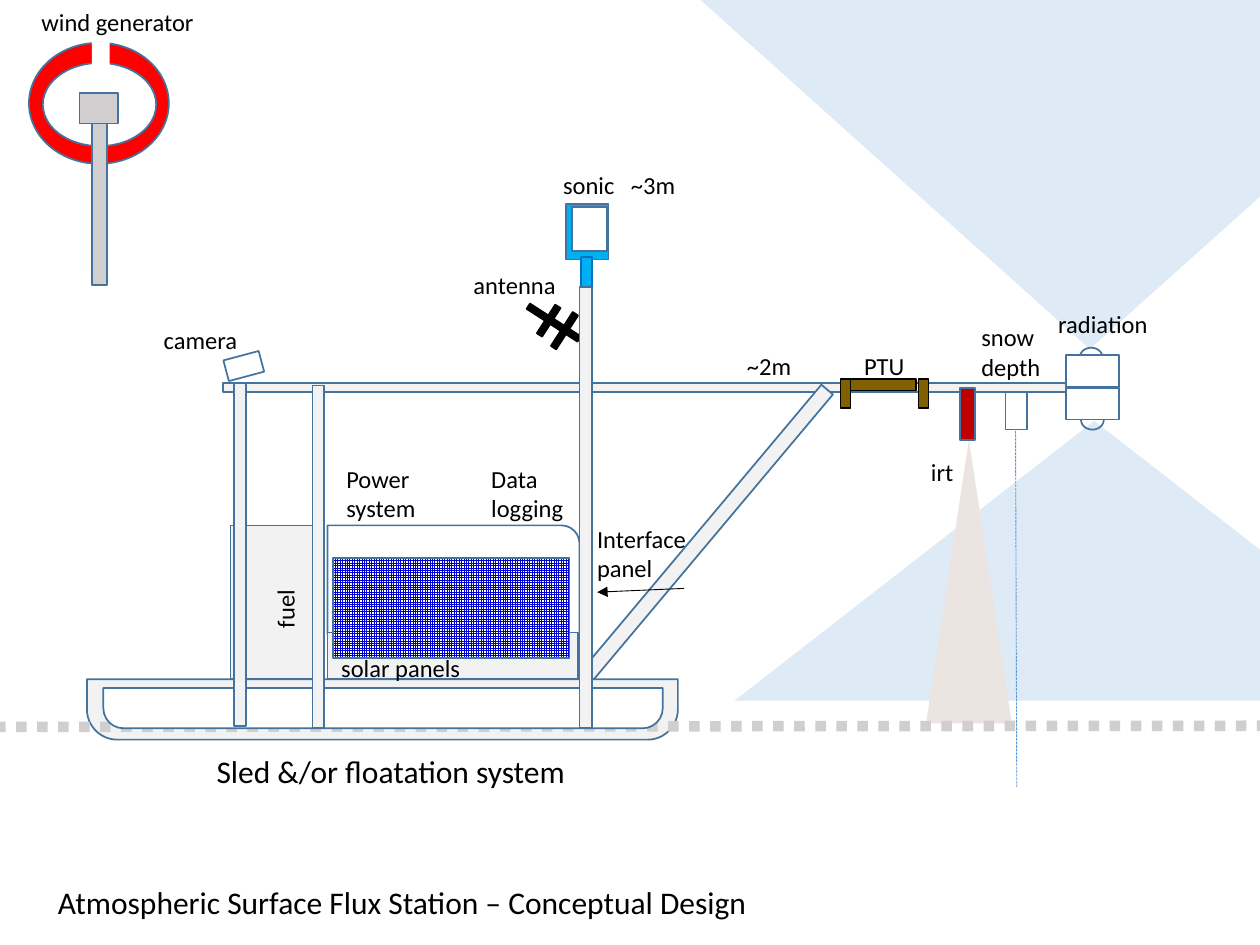
from lxml import etree
from pptx import Presentation
from pptx.dml.color import RGBColor
from pptx.enum.dml import MSO_LINE, MSO_PATTERN
from pptx.enum.shapes import MSO_CONNECTOR, MSO_SHAPE
from pptx.enum.text import MSO_ANCHOR, PP_ALIGN
from pptx.oxml.ns import qn
from pptx.util import Inches, Pt

RECT = MSO_SHAPE.RECTANGLE
OVAL = MSO_SHAPE.OVAL
TRIANGLE = MSO_SHAPE.ISOSCELES_TRIANGLE
HULL = MSO_SHAPE.ROUND_2_SAME_RECTANGLE
CABIN = MSO_SHAPE.ROUND_1_RECTANGLE
DASH = MSO_LINE.SQUARE_DOT
DOT = MSO_LINE.ROUND_DOT

OUTLINE = "43739E"
FRAME = "F2F2F2"
SKY = "DEEBF7"
STEEL = "D0CECE"
WHITE = "FFFFFF"
BLACK = "000000"
CYAN = "00B0F0"
BRONZE = "806000"

color = RGBColor.from_string

prs = Presentation()
prs.slide_width = Inches(10)
prs.slide_height = Inches(7.5)
slide = prs.slides.add_slide(prs.slide_layouts[5])


def add_part(kind, left, top, width, height, fill=None, line=OUTLINE, turn=0):
    part = slide.shapes.add_shape(
        kind, Inches(left), Inches(top), Inches(width), Inches(height))
    part.shadow.inherit = False
    part.rotation = turn
    if fill:
        part.fill.solid()
        part.fill.fore_color.rgb = color(fill)
    else:
        part.fill.background()
    if line:
        part.line.color.rgb = color(line)
        part.line.width = Pt(1)
    else:
        part.line.fill.background()
    if kind == HULL:
        part.adjustments[0] = 0.5
        part.adjustments[1] = 0
    return part


def write_text(holder, text, size, wrap):
    frame = holder.text_frame
    frame.word_wrap = wrap
    frame.vertical_anchor = MSO_ANCHOR.TOP
    paragraph = frame.paragraphs[0]
    paragraph.alignment = PP_ALIGN.LEFT
    run = paragraph.add_run()
    run.text = text
    run.font.name = "Calibri"
    run.font.size = Pt(size)
    run.font.color.rgb = color(BLACK)


title = slide.shapes.title
title.left, title.top = Inches(0.36), Inches(6.96)
title.width, title.height = Inches(6.24), Inches(0.4)
write_text(title, "Atmospheric Surface Flux Station – Conceptual Design", 18, True)

for part in [
    (TRIANGLE, 5.83, 3.34, 5.71, 2.22, SKY, None),
    (TRIANGLE, 5.56, 0, 6.18, 2.77, SKY, None, 180),
]:
    add_part(*part)

wind_generator = [
    (OVAL, 0.23, 0.34, 1.11, 0.96, "FF0000"),
    (OVAL, 0.34, 0.5, 0.9, 0.66, WHITE),
    (RECT, 0.73, 0.33, 0.14, 0.28, WHITE, None),
    (RECT, 0.73, 0.97, 0.12, 1.29, STEEL),
    (RECT, 0.63, 0.74, 0.31, 0.24, STEEL),
]
sled_frame = [
    (CABIN, 2.6, 4.17, 2, 0.86),
    (RECT, 1.77, 3.04, 6.69, 0.07, FRAME),
    (RECT, 4.06, 4.2, 3.05, 0.12, FRAME, OUTLINE, 310),
    (RECT, 7.98, 3.11, 0.17, 0.3),
    (HULL, 0.69, 5.39, 4.69, 0.48, FRAME, OUTLINE, 180),
    (RECT, 2.6, 5.02, 1.99, 0.37, FRAME),
]
radiation_sensor = [
    (OVAL, 8.58, 3.26, 0.18, 0.15),
    (OVAL, 8.57, 2.76, 0.18, 0.15),
    (RECT, 8.46, 3.08, 0.42, 0.25, WHITE),
    (RECT, 8.46, 2.82, 0.42, 0.25, WHITE),
]
antenna = [
    (RECT, 4.37, 2.32, 0.05, 0.48, BLACK, BLACK, 302.8),
    (RECT, 4.22, 2.52, 0.27, 0.05, BLACK, BLACK, 302.8),
    (RECT, 4.32, 2.6, 0.32, 0.05, BLACK, BLACK, 302.8),
]
camera = [(RECT, 1.79, 2.82, 0.29, 0.17, None, OUTLINE, 345.1)]
irt = [
    (TRIANGLE, 7.35, 3.49, 0.68, 2.25, "EBE4E1", None),
    (RECT, 7.62, 3.08, 0.12, 0.41, "C00000"),
]
sonic = [
    (RECT, 4.49, 1.62, 0.34, 0.44, CYAN),
    (RECT, 4.54, 1.64, 0.28, 0.35, WHITE),
    (RECT, 4.61, 2.04, 0.09, 0.24, CYAN, "0070C0"),
]
for device in [wind_generator, sled_frame, radiation_sensor, antenna, camera, irt, sonic]:
    for part in device:
        add_part(*part)

solar_panels = add_part(RECT, 2.64, 4.43, 1.88, 0.79)
solar_panels.fill.patterned()
solar_panels.fill.pattern = MSO_PATTERN.SMALL_GRID
solar_panels.fill.fore_color.rgb = color("0000CC")
solar_panels.fill.back_color.rgb = color(WHITE)

for x1, y1, x2, y2, stroke, weight, dash, has_arrow in [
    (8.06, 3.42, 8.07, 6.25, "5B9BD5", 0.5, DASH, False),
    (-0.04, 5.77, 10, 5.76, STEEL, 6, DOT, False),
    (5.43, 4.67, 4.74, 4.7, BLACK, 0.5, None, True),
]:
    connector = slide.shapes.add_connector(
        MSO_CONNECTOR.STRAIGHT, Inches(x1), Inches(y1), Inches(x2), Inches(y2))
    connector.line.color.rgb = color(stroke)
    connector.line.width = Pt(weight)
    if dash:
        connector.line.dash_style = dash
    properties = connector.element.spPr
    if has_arrow:
        etree.SubElement(properties.find(qn("a:ln")), qn("a:tailEnd"), type="triangle")
    etree.SubElement(properties, qn("a:effectLst"))

fuel_tank = add_part(RECT, 1.83, 4.17, 0.73, 1.22, FRAME)

ptu = [
    (6.75, 0.52, 0.09),
    (6.67, 0.08, 0.23),
    (7.29, 0.08, 0.23),
]
for left, width, height in ptu:
    add_part(RECT, left, 3.01, width, height, BRONZE, BLACK)

for text, left, top, width, height, size, wrap, turn in [
    ("wind generator", 0.23, 0.01, 1.42, 0.34, 14, False, 0),
    ("radiation", 8.3, 2.4, 0.92, 0.34, 14, False, 0),
    ("snow depth", 7.69, 2.51, 0.87, 0.57, 14, True, 0),
    ("PTU", 6.76, 2.74, 0.53, 0.34, 14, False, 0),
    ("sonic", 4.37, 1.3, 0.61, 0.34, 14, False, 0),
    ("irt", 7.29, 3.58, 0.38, 0.34, 14, False, 0),
    ("Sled &/or floatation system", 1.62, 5.92, 3.12, 0.4, 18, True, 0),
    ("antenna", 3.66, 2.09, 0.86, 0.34, 14, False, 0),
    ("camera", 1.2, 2.53, 0.79, 0.34, 14, False, 0),
    ("solar panels", 2.61, 5.13, 1.64, 0.34, 14, True, 0),
    ("fuel", 2.01, 4.66, 0.51, 0.34, 14, False, 270),
    ("~2m", 5.83, 2.74, 0.56, 0.34, 14, False, 0),
    ("~3m", 4.91, 1.3, 0.56, 0.34, 14, False, 0),
    ("Power system", 2.65, 3.63, 0.98, 0.57, 14, True, 0),
    ("Data logging", 3.8, 3.63, 0.79, 0.57, 14, True, 0),
    ("Interface panel", 4.64, 4.11, 0.94, 0.57, 14, True, 0),
]:
    label = slide.shapes.add_textbox(
        Inches(left), Inches(top), Inches(width), Inches(height))
    label.rotation = turn
    write_text(label, text, size, wrap)

add_part(HULL, 0.82, 5.46, 4.44, 0.32, WHITE, OUTLINE, 180)

for left, top, width, height in [
    (1.86, 3.04, 0.09, 2.72),
    (2.48, 3.06, 0.09, 2.72),
    (4.6, 2.28, 0.1, 3.5),
]:
    add_part(RECT, left, top, width, height, FRAME)

prs.save("out.pptx")
